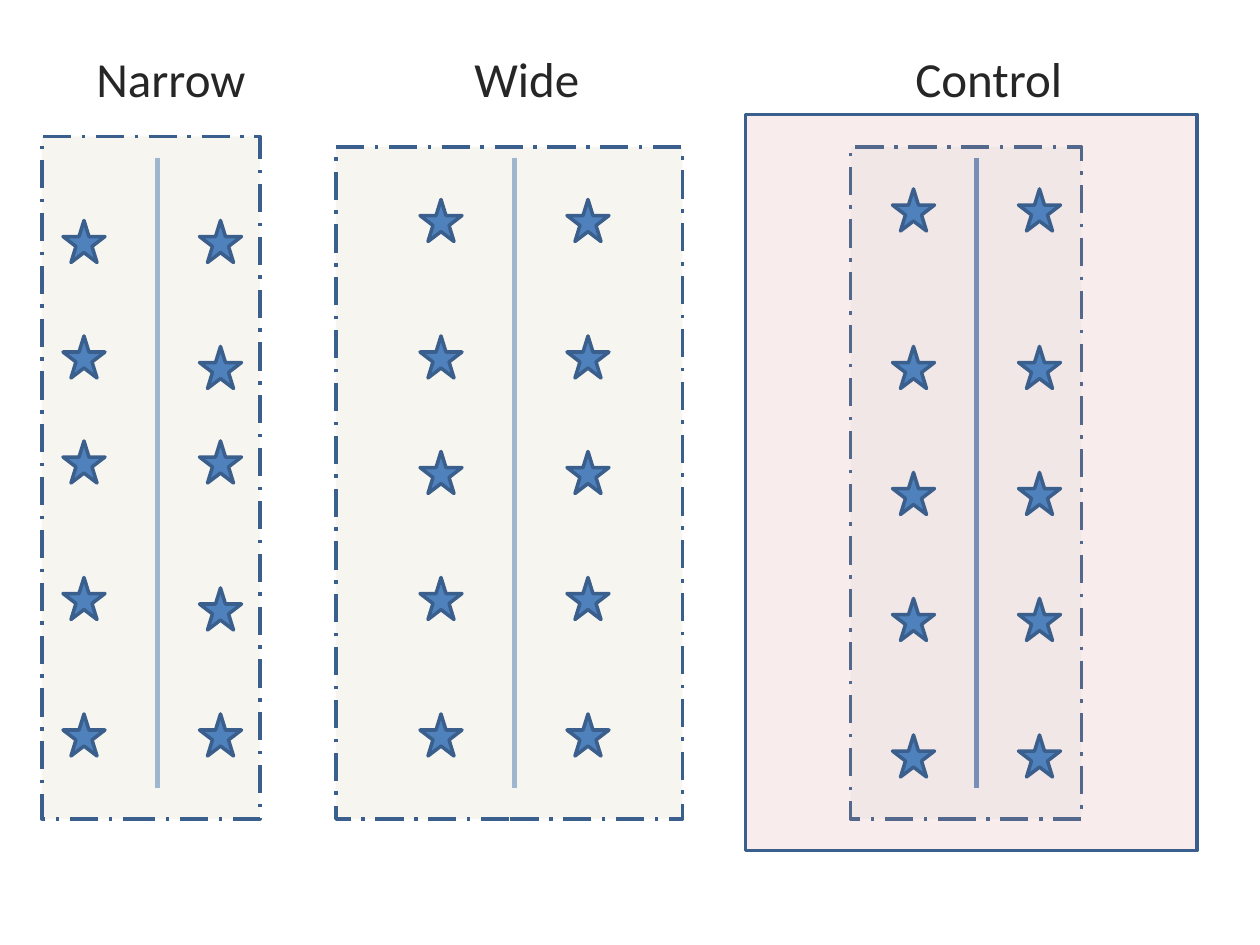
"""Build a slide comparing narrow, wide and control plot layouts."""
from lxml import etree
from pptx import Presentation
from pptx.dml.color import RGBColor
from pptx.enum import dml, shapes, text
from pptx.oxml.ns import qn
from pptx.util import Pt

THEME = {
    "font": "Calibri", "label_size": 28, "label": "262626",
    "row": "4B7EBC", "row_width": 3.25,
    "outline": "3A5F8C", "outline_width": 2,
    "plot": "EEECE1", "control": "D9D9D9", "surround": "D99694", "star": "4F81BD",
}
ROW_TOP, ROW_BOTTOM = 90, 450
LABEL_TOP, LABEL_HEIGHT = 24, 41
STAR_SIZE = 24

TREATMENTS = [
    {"label": "Narrow", "label_left": 48, "label_width": 101, "row_x": 90,
     "plots": [((24, 78, 124.5, 390), "plot", 51, True)],
     "stars": {36: (126, 192, 252, 330, 408), 114: (126, 198, 252, 336, 408)}},
    {"label": "Wide", "label_left": 264, "label_width": 75, "row_x": 294,
     "plots": [((192, 84, 198, 384), "plot", 51, True)],
     "stars": dict.fromkeys((240, 324), (114, 192, 258, 330, 408))},
    {"label": "Control", "label_left": 516, "label_width": 99.5, "row_x": 558,
     "plots": [((486, 84, 132, 384), "control", 17, True),
               ((426, 65.5, 258, 420.5), "surround", 17, False)],
     "stars": dict.fromkeys((510, 582), (108, 198, 270, 342, 420))},
]


def color(role):
    return RGBColor.from_string(THEME[role])


def add_row(slide, x):
    row = slide.shapes.add_connector(
        shapes.MSO_CONNECTOR.STRAIGHT, Pt(x), Pt(ROW_TOP), Pt(x), Pt(ROW_BOTTOM))
    row.line.color.rgb = color("row")
    row.line.width = Pt(THEME["row_width"])
    etree.SubElement(row._element.spPr, qn("a:effectLst"))


def add_figure(slide, preset, box, role, opacity=100, dashed=False):
    figure = slide.shapes.add_shape(preset, *map(Pt, box))
    figure.shadow.inherit = False
    figure.fill.solid()
    figure.fill.fore_color.rgb = color(role)
    if opacity < 100:
        tint = figure._element.spPr.find(f"{qn('a:solidFill')}/{qn('a:srgbClr')}")
        etree.SubElement(tint, qn("a:alpha"), val=str(opacity * 1000))
    figure.line.color.rgb = color("outline")
    figure.line.width = Pt(THEME["outline_width"])
    if dashed:
        figure.line.dash_style = dml.MSO_LINE.LONG_DASH_DOT


def add_label(slide, wording, *, left, width, size, role):
    label = slide.shapes.add_textbox(
        Pt(left), Pt(LABEL_TOP), Pt(width), Pt(LABEL_HEIGHT))
    frame = label.text_frame
    frame.word_wrap = False
    frame.auto_size = text.MSO_AUTO_SIZE.SHAPE_TO_FIT_TEXT
    run = frame.paragraphs[0].add_run()
    run.text = wording
    run.font.name = THEME["font"]
    run.font.size = Pt(size)
    run.font.color.rgb = color(role)


def main():
    deck = Presentation()
    deck.slide_width, deck.slide_height = Pt(720), Pt(540)
    slide = deck.slides.add_slide(deck.slide_layouts[6])
    for treatment in TREATMENTS:
        add_row(slide, treatment["row_x"])
        for box, role, opacity, dashed in treatment["plots"]:
            add_figure(slide, shapes.MSO_SHAPE.RECTANGLE, box, role, opacity, dashed)
        add_label(slide, treatment["label"], left=treatment["label_left"],
                  width=treatment["label_width"], size=THEME["label_size"], role="label")
        for left, tops in treatment["stars"].items():
            for top in tops:
                add_figure(slide, shapes.MSO_SHAPE.STAR_5_POINT,
                           (left, top, STAR_SIZE, STAR_SIZE), "star")
    deck.save("out.pptx")


if __name__ == "__main__":
    main()
